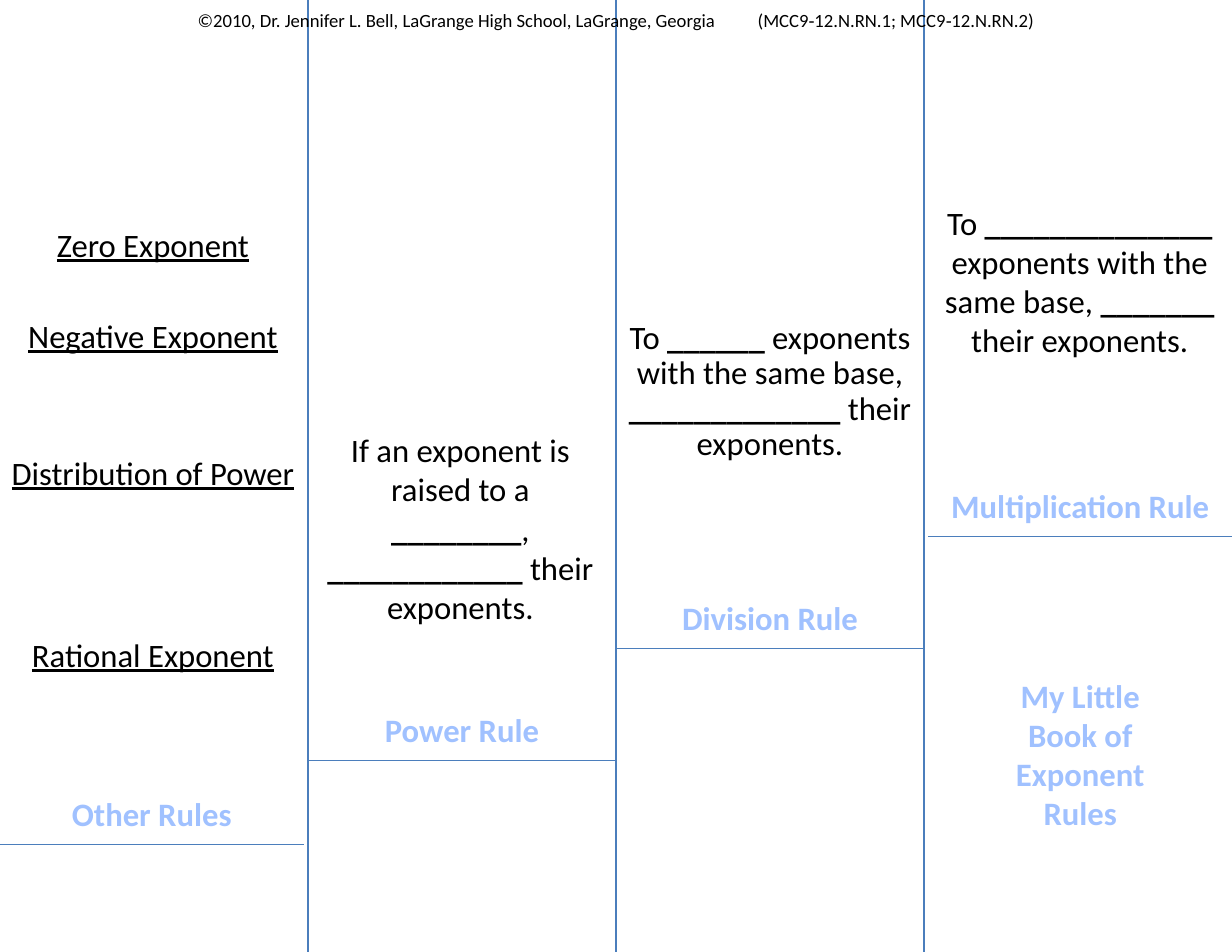
import pptx
import pptx.util
import pptx.dml.color
import pptx.enum.shapes
import pptx.enum.text
import pptx.oxml

WIDE, HIGH = 11, 8.5
COL = WIDE / 4
PITCH, LINE = 29.4, 25.6
BLUE, PALE, BLACK = "4B7EBC", "A0C1FF", "000000"

TABS = [
    ("Other Rules", 0, 2.71, 7.54),
    ("Power Rule", COL, COL, 6.79),
    ("Division Rule", 2 * COL, COL, 5.79),
    ("Multiplication Rule", 3 * COL + 0.04, 2.71, 4.79),
]
RULES = [
    ("If an exponent is raised to a *________*, *____________* their exponents.",
     (COL, 3.79, 2.72, 2.53), 1),
    ("To *______* exponents with the same base, *_____________* their exponents.",
     (2 * COL, 2.82, COL, 2.34), 0.9),
    ("To *______________ *exponents with the same base, *_______ *their exponents.",
     (3 * COL + 0.03, 1.76, 2.72, 2.44), 1),
]
OTHER = ["Zero Exponent", "Negative Exponent", "Distribution of Power", "Rational Exponent"]
COVER = ["My Little", "Book of", "Exponent", "Rules"]
CREDIT = ("©2010, Dr. Jennifer L. Bell, LaGrange High School, LaGrange, Georgia "
          "\t(MCC9‐12.N.RN.1; MCC9‐12.N.RN.2)")


def tint(code):
    """Return the colour for a hex string."""
    return pptx.dml.color.RGBColor.from_string(code)


def place(shape, left, top, width, height):
    """Set the place and size of a shape in inches."""
    shape.left, shape.top, shape.width, shape.height = map(
        pptx.util.Inches, (left, top, width, height))


def write(shape, lines, size=21, color=BLACK, bold=False, under=False, lead=1, gaps=None):
    """Fill a shape with centred lines, where asterisks switch bold."""
    frame = shape.text_frame
    frame.word_wrap = True
    frame.auto_size = pptx.enum.text.MSO_AUTO_SIZE.NONE
    frame.vertical_anchor = pptx.enum.text.MSO_ANCHOR.TOP
    frame.margin_left = frame.margin_right = pptx.util.Inches(0.11)
    frame.margin_top = frame.margin_bottom = pptx.util.Inches(0.05)
    for row, line in enumerate(lines):
        para = frame.add_paragraph() if row else frame.paragraphs[0]
        para.alignment = pptx.enum.text.PP_ALIGN.CENTER
        para.line_spacing = lead
        para.space_before = pptx.util.Pt(gaps[row] if gaps else 0)
        for part, text in enumerate(line.split("*")):
            run = para.add_run()
            run.text = text
            font = run.font
            font.name, font.size = "Calibri", pptx.util.Pt(size)
            font.bold, font.underline = bold or part % 2 == 1, under
            font.color.rgb = tint(color)


def label(slide, lines, area, **form):
    """Add a text box over an area."""
    box = slide.shapes.add_textbox(0, 0, 0, 0)
    place(box, *area)
    write(box, lines, **form)


def rule(slide, *ends):
    """Draw a thin blue line between two points."""
    line = slide.shapes.add_connector(
        pptx.enum.shapes.MSO_CONNECTOR.STRAIGHT, *map(pptx.util.Inches, ends))
    line.line.color.rgb = tint(BLUE)
    line.line.width = pptx.util.Pt(0.75)
    line.element.spPr.append(pptx.oxml.parse_xml(
        '<a:effectLst xmlns:a="http://schemas.openxmlformats.org/drawingml/2006/main"/>'))


def main():
    """Build the foldable book of exponent rules."""
    deck = pptx.Presentation()
    deck.slide_width = pptx.util.Inches(WIDE)
    deck.slide_height = pptx.util.Inches(HIGH)
    slide = deck.slides.add_slide(deck.slide_layouts[5])
    for col in range(1, 4):
        rule(slide, col * COL, 0, col * COL, HIGH)
    for text, left, width, base in TABS:
        label(slide, [text], (left, base - 0.5, width, 0.46), color=PALE, bold=True)
        rule(slide, left, base, left + width, base)
    gaps = [0] + [PITCH * step - LINE for step in (2, 3, 4)]
    label(slide, OTHER, (-0.08, 1.96, 2.89, 4.07), under=True, gaps=gaps)
    for text, area, lead in RULES:
        label(slide, [text], area, lead=lead)
    label(slide, [CREDIT], (0, 0.03, WIDE, 0.3), size=12)
    title = slide.shapes.title
    place(title, 3 * COL + 0.04, 5.98, 2.71, 1.52)
    write(title, COVER, color=PALE, bold=True)
    deck.save("out.pptx")


if __name__ == "__main__":
    main()
